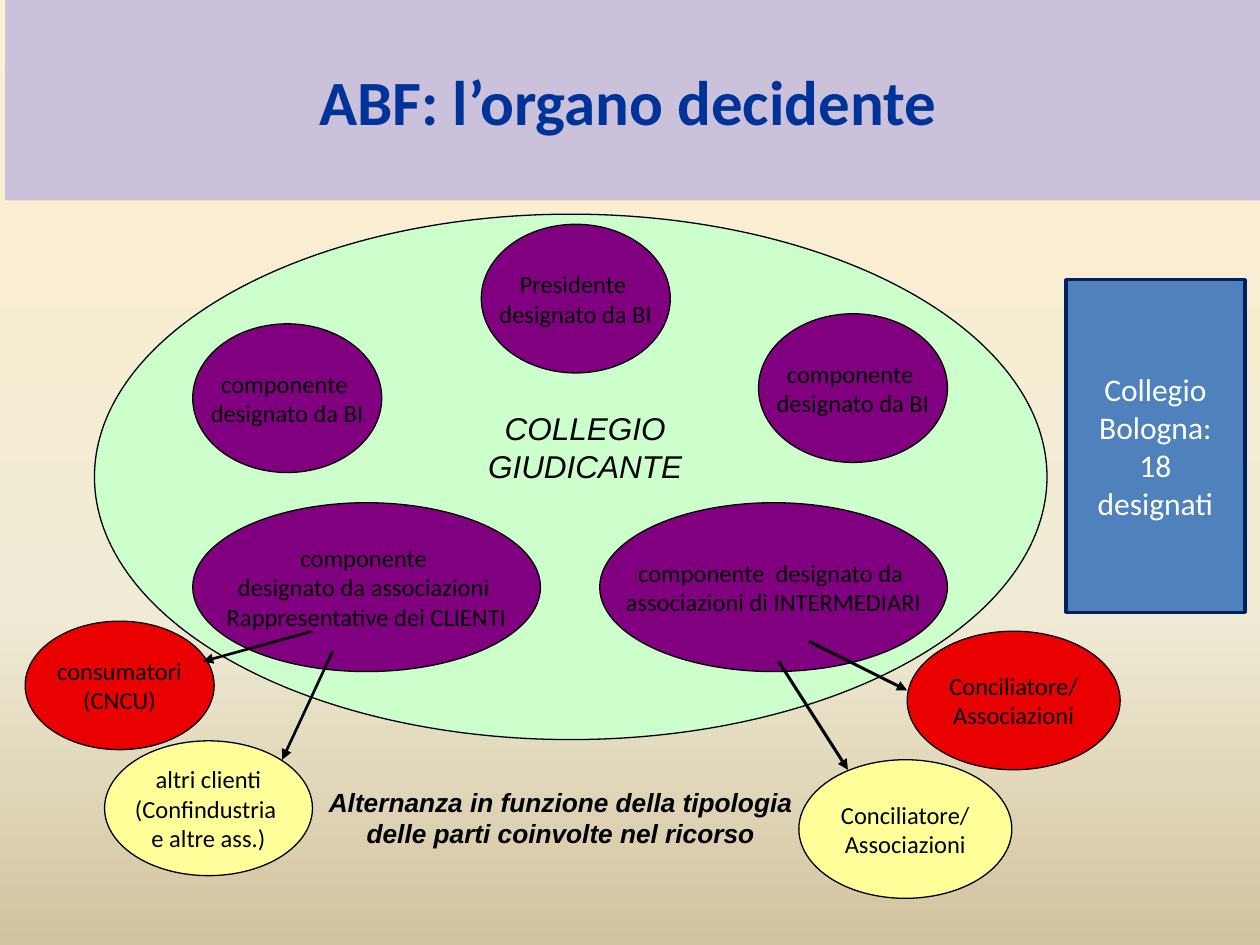
from copy import deepcopy
from pptx import Presentation
from pptx.dml.color import RGBColor
from pptx.enum.shapes import MSO_CONNECTOR, MSO_SHAPE
from pptx.enum.text import MSO_ANCHOR, PP_ALIGN
from pptx.oxml import parse_xml
from pptx.util import Inches, Pt

OVAL, RECT = MSO_SHAPE.OVAL, MSO_SHAPE.RECTANGLE
LINE = MSO_CONNECTOR.STRAIGHT
MID, TOP = MSO_ANCHOR.MIDDLE, MSO_ANCHOR.TOP
CENTER = PP_ALIGN.CENTER
NS = 'xmlns:a="http://schemas.openxmlformats.org/drawingml/2006/main"'
HEX = {
    "black": "000000", "white": "FFFFFF", "navy": "002060", "title": "003399",
    "band": "CCC1DA", "green": "CCFFCC", "purple": "800080", "red": "EA0000",
    "yellow": "FFFF99", "blue": "4F81BD", "glow": "8EB4E3",
}
RGB = {name: RGBColor.from_string(code) for name, code in HEX.items()}


def write(shape, lines, size, font="Calibri", color="black", bold=False,
          italic=False, wrap=True, anchor=MID):
    frame = shape.text_frame
    frame.word_wrap = wrap
    frame.vertical_anchor = anchor
    frame.text = "\n".join(lines)
    for para in frame.paragraphs:
        para.alignment = CENTER
        para.font.name = font
        para.font.size = Pt(size)
        para.font.bold = bold
        para.font.italic = italic
        para.font.color.rgb = RGB[color]


def draw(kind, box, fill, edge="black", width=0.75):
    shape = slide.shapes.add_shape(kind, *map(Inches, box))
    shape.shadow.inherit = False
    shape.fill.solid()
    shape.fill.fore_color.rgb = RGB[fill]
    shape.line.color.rgb = RGB[edge]
    shape.line.width = Pt(width)
    return shape


prs = Presentation()
prs.slide_width, prs.slide_height = Inches(10), Inches(7.5)
slide = prs.slides.add_slide(prs.slide_layouts[5])

back = slide.background.fill
back.gradient()
back.gradient_angle = 270
first = back.gradient_stops[0]._gs
first.addnext(deepcopy(first))
stops = [(0, "FFEFD1"), (0.65, "F0EBD5"), (1, "D1C39F")]
for stop, (pos, code) in zip(back.gradient_stops, stops):
    stop.position = pos
    stop.color.rgb = RGBColor.from_string(code)

title = slide.shapes.title
title.left, title.top = Inches(0.04), Inches(0)
title.width, title.height = Inches(10), Inches(1.59)
title.fill.solid()
title.fill.fore_color.rgb = RGB["band"]
write(title, ["ABF: l’organo decidente "], 36, color="title", bold=True)

draw(OVAL, (0.75, 1.7, 7.56, 4.17), "green")

members = [
    (3.82, 1.78, 1.5, 1.18, ["Presidente ", "designato da BI"]),
    (6.02, 2.49, 1.5, 1.18, ["componente ", "designato da BI"]),
    (1.53, 2.57, 1.5, 1.18, ["componente ", "designato da BI"]),
    (1.53, 3.99, 2.76, 1.34, ["componente ", "designato da associazioni ",
                              "Rappresentative dei CLIENTI"]),
    (4.76, 3.99, 2.76, 1.34, ["componente  designato da ",
                              "associazioni di INTERMEDIARI"]),
]
for *box, lines in members:
    oval = draw(OVAL, box, "purple")
    write(oval, lines, 14, wrap=False)
    for para in oval.text_frame.paragraphs:
        for run in para.runs:
            run._r.get_or_add_rPr().insert(0, parse_xml(
                f'<a:ln {NS} w="9525"><a:solidFill><a:srgbClr val="{HEX["glow"]}"/>'
                '</a:solidFill></a:ln>'))

notes = [
    (2.48, 6.19, 3.94, 0.61, 15, True,
     "Alternanza in funzione della tipologia delle parti coinvolte nel ricorso"),
    (3.58, 3.2, 2.13, 0.71, 18, False, "COLLEGIO GIUDICANTE"),
]
for *box, size, bold, text in notes:
    label = slide.shapes.add_textbox(*map(Inches, box))
    write(label, [text], size, "Arial", bold=bold, italic=True, anchor=TOP)

groups = [
    (7.2, 5.01, 1.69, 1.1, "red", ["Conciliatore/", "Associazioni"]),
    (6.34, 6.03, 1.69, 1.1, "yellow", ["Conciliatore/", "Associazioni"]),
    (0.83, 5.88, 1.65, 1.07, "yellow",
     ["altri clienti", "(Confindustria ", "e altre ass.)"]),
    (0.2, 4.93, 1.5, 1.02, "red", ["consumatori", "(CNCU)"]),
]
for *box, fill, lines in groups:
    write(draw(OVAL, box, fill), lines, 14, wrap=False)

arrows = [
    (6.42, 5.09, 7.2, 5.48, 1.75),
    (6.18, 5.25, 6.73, 6.11, 1.75),
    (2.48, 5.01, 1.61, 5.25, 1.5),
    (2.64, 5.17, 2.24, 6.03, 1.5),
]
for *ends, width in arrows:
    arrow = slide.shapes.add_connector(LINE, *map(Inches, ends))
    arrow.line.color.rgb = RGB["black"]
    arrow.line.width = Pt(width)
    arrow.line._get_or_add_ln().append(parse_xml(f'<a:tailEnd {NS} type="triangle"/>'))
    arrow._element.spPr.append(parse_xml(f"<a:effectLst {NS}/>"))

panel = draw(RECT, (8.46, 2.22, 1.42, 2.64), "blue", "navy", 2)
write(panel, ["Collegio Bologna:", "18 designati"], 18, color="white")

prs.save("out.pptx")
